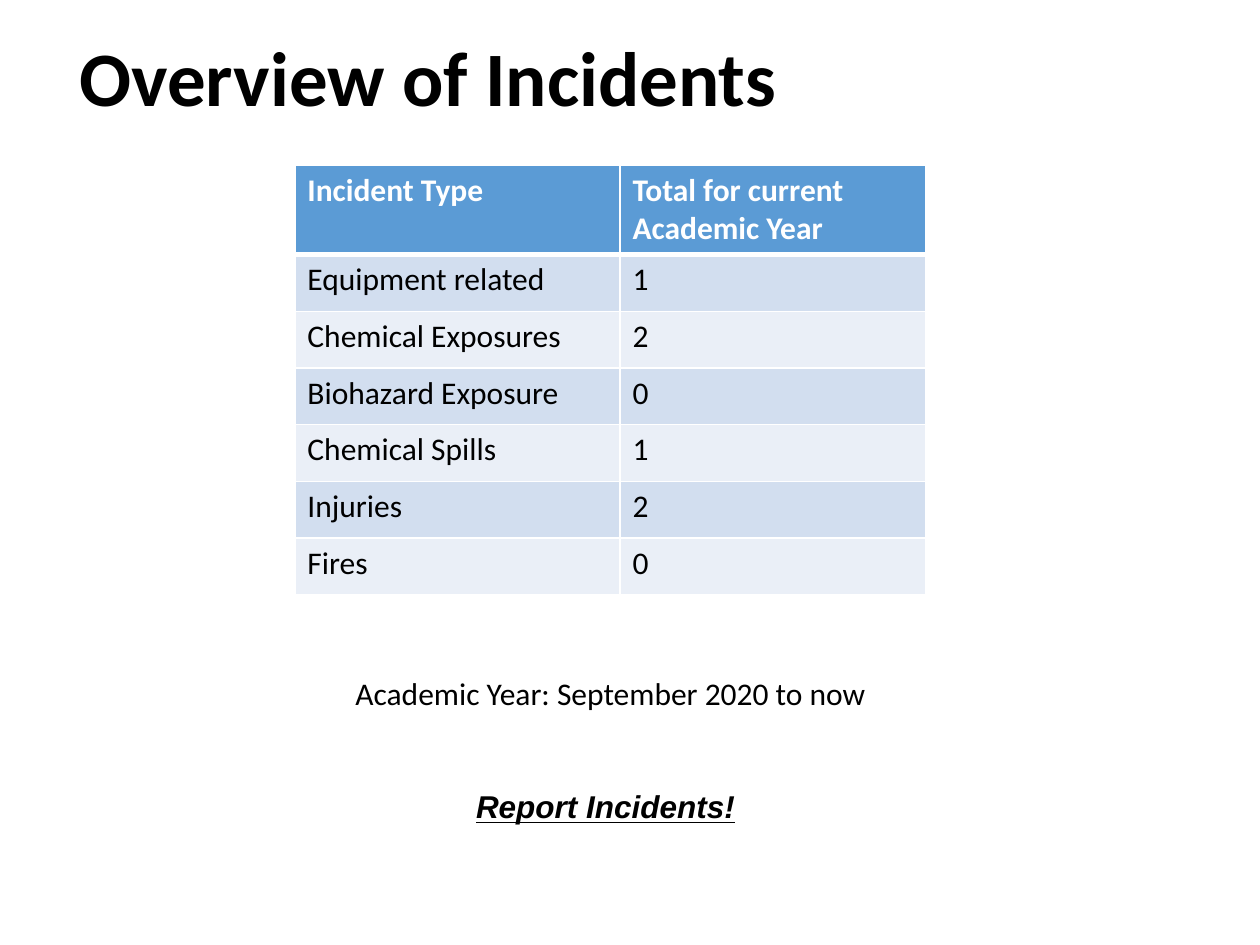
from dataclasses import dataclass

from lxml.etree import SubElement
from pptx import Presentation
from pptx.dml.color import RGBColor
from pptx.enum.text import MSO_ANCHOR, PP_ALIGN
from pptx.oxml.ns import qn
from pptx.util import Inches, Pt


@dataclass(frozen=True)
class Theme:
    text: str = "000000"
    light: str = "FFFFFF"
    header: str = "5B9BD5"
    bands: tuple = ("D2DEEF", "EAEFF7")
    font: str = "Calibri"
    accent_font: str = "Arial"
    title_size: int = 44
    body_size: int = 18


class SlideBuilder:
    def __init__(self, prs, theme):
        self.theme = theme
        self.slide = prs.slides.add_slide(prs.slide_layouts[5])

    def add_run(self, p, text, size=None, font=None, color=None,
                bold=False, italic=False, underline=False):
        r = p.add_run()
        r.text = text
        r.font.size = Pt(size or self.theme.body_size)
        r.font.name = font or self.theme.font
        r.font.color.rgb = RGBColor.from_string(color or self.theme.text)
        r.font.bold = bold
        r.font.italic = italic
        r.font.underline = underline

    def title(self, text, left, top, width, height):
        sp = self.slide.shapes.title
        sp.left, sp.top = Inches(left), Inches(top)
        sp.width, sp.height = Inches(width), Inches(height)
        tf = sp.text_frame
        tf.word_wrap = True
        tf.vertical_anchor = MSO_ANCHOR.MIDDLE
        p = tf.paragraphs[0]
        p.alignment = PP_ALIGN.LEFT
        p.line_spacing = 0.9
        self.add_run(p, text, size=self.theme.title_size, bold=True)

    def text(self, text, left, top, width, height, align=PP_ALIGN.LEFT, **style):
        sp = self.slide.shapes.add_textbox(
            Inches(left), Inches(top), Inches(width), Inches(height))
        tf = sp.text_frame
        tf.word_wrap = False
        p = tf.paragraphs[0]
        p.alignment = align
        self.add_run(p, text, **style)

    def cell_borders(self, cell, bottom):
        # Borders come before the fill in the cell properties
        tc_pr = cell._tc.get_or_add_tcPr()
        for side, width in (("L", 1), ("R", 1), ("T", 1), ("B", bottom)):
            ln = SubElement(tc_pr, qn(f"a:ln{side}"), w=str(Pt(width)))
            fill = SubElement(ln, qn("a:solidFill"))
            SubElement(fill, qn("a:srgbClr"), val=self.theme.light)

    def table(self, rows, left, top, col_widths, row_heights):
        frame = self.slide.shapes.add_table(
            len(rows), len(col_widths), Inches(left), Inches(top),
            Inches(sum(col_widths)), Inches(sum(row_heights)))
        table = frame.table
        for col, width in zip(table.columns, col_widths):
            col.width = Inches(width)
        for i, values in enumerate(rows):
            table.rows[i].height = Inches(row_heights[i])
            is_header = i == 0
            fill = self.theme.header if is_header else self.theme.bands[(i - 1) % 2]
            color = self.theme.light if is_header else self.theme.text
            for j, value in enumerate(values):
                cell = table.cell(i, j)
                self.cell_borders(cell, bottom=3 if is_header else 1)
                cell.fill.solid()
                cell.fill.fore_color.rgb = RGBColor.from_string(fill)
                self.add_run(cell.text_frame.paragraphs[0], value,
                             color=color, bold=is_header)


def main():
    prs = Presentation()
    prs.slide_width, prs.slide_height = Inches(10), Inches(7.5)
    s = SlideBuilder(prs, Theme())

    # Title
    s.title("Overview of Incidents", 0.53, 0.15, 8.62, 1)

    # Incident counts
    incidents = [
        ("Incident Type", "Total for current Academic Year"),
        ("Equipment related", "1"),
        ("Chemical Exposures", "2"),
        ("Biohazard Exposure", "0"),
        ("Chemical Spills", "1"),
        ("Injuries", "2"),
        ("Fires", "0"),
    ]
    s.table(incidents, 2.34, 1.31, col_widths=(2.58, 2.43),
            row_heights=[0.7] + [0.45] * (len(incidents) - 1))

    # Period and call to action
    s.text("Academic Year: September 2020 to now", 2.6, 5.3, 4.49, 0.71,
           align=PP_ALIGN.CENTER)
    s.text("Report Incidents!", 3.68, 6.2, 2.34, 0.4,
           font=s.theme.accent_font, bold=True, italic=True, underline=True)

    prs.save("out.pptx")


if __name__ == "__main__":
    main()
